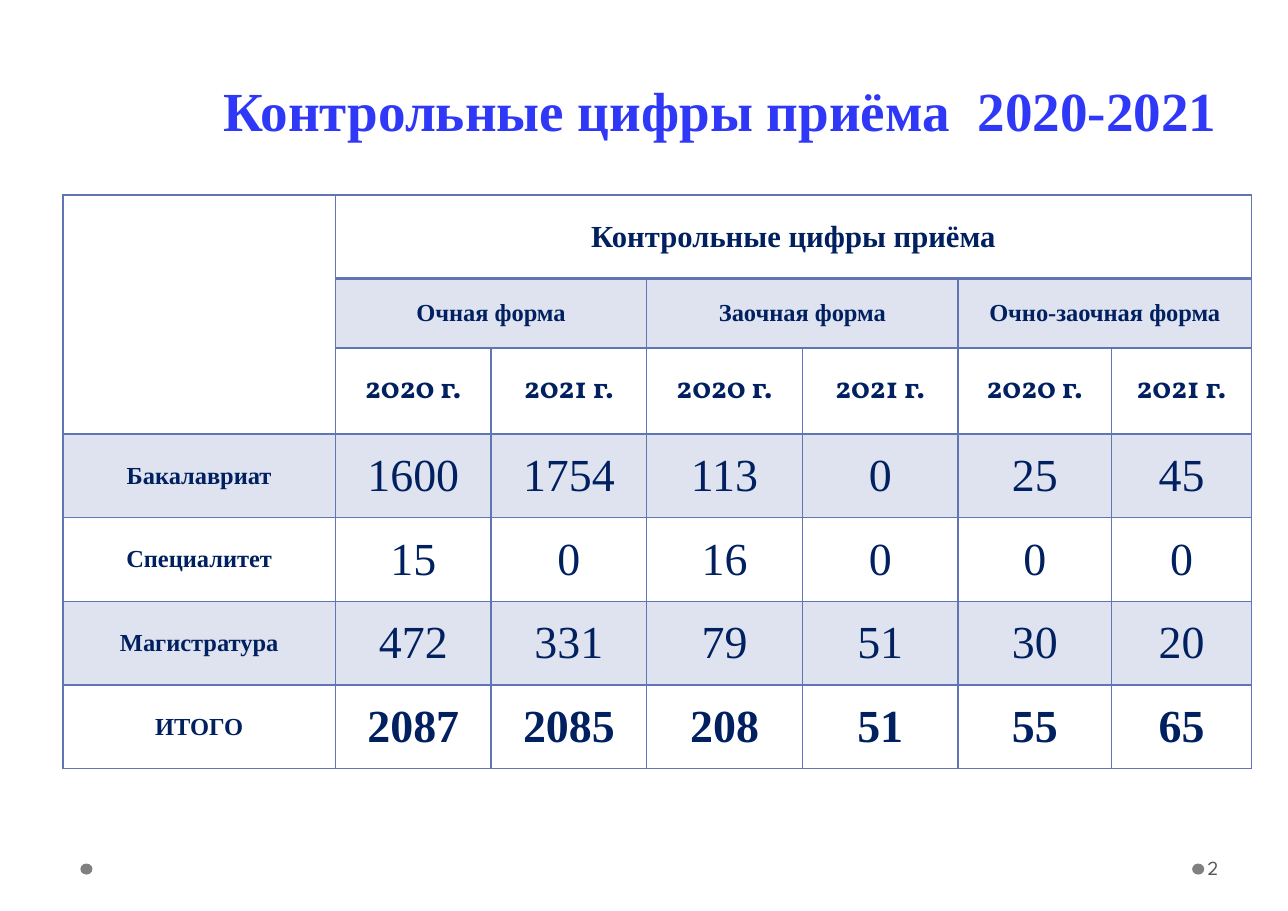
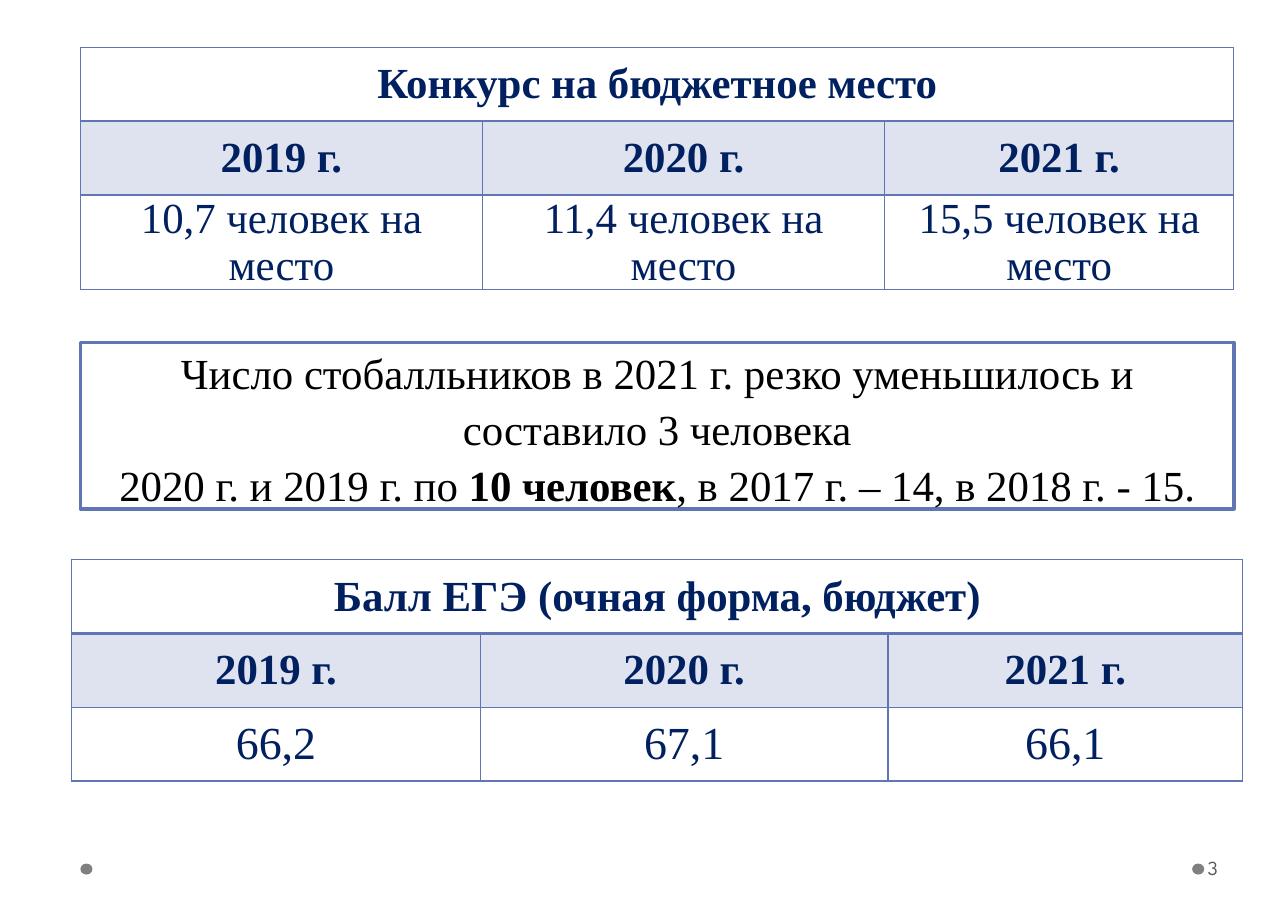
from dataclasses import dataclass

from lxml import etree
from pptx import Presentation
from pptx.dml.color import RGBColor
from pptx.enum.shapes import MSO_SHAPE
from pptx.enum.text import MSO_ANCHOR, MSO_AUTO_SIZE, PP_ALIGN
from pptx.oxml.ns import qn
from pptx.util import Inches, Pt

ELLIPSE, RECTANGLE = MSO_SHAPE.OVAL, MSO_SHAPE.RECTANGLE
CENTER, LEFT = PP_ALIGN.CENTER, PP_ALIGN.LEFT
MIDDLE = MSO_ANCHOR.MIDDLE
NO_AUTOFIT = MSO_AUTO_SIZE.NONE

SLIDE_WIDTH, SLIDE_HEIGHT = Inches(11.69), Inches(8.27)
TITLE_ONLY_LAYOUT, BLANK_LAYOUT = 5, 6

TITLE_BLUE, NAVY, ACCENT = "2E38F6", "002060", "6076B4"
GRAY, DARK_GRAY, BLACK, WHITE = "808080", "595959", "000000", "FFFFFF"
SERIF = "Times New Roman"
BAND_ALPHA = 20
THIN, THICK = 1, 2


@dataclass(frozen=True)
class Box:
    """Place on the slide, in percent of its width and height."""
    left: float
    top: float
    width: float
    height: float

    def lengths(self) -> tuple[int, int, int, int]:
        return (int(SLIDE_WIDTH * self.left / 100), int(SLIDE_HEIGHT * self.top / 100),
                int(SLIDE_WIDTH * self.width / 100), int(SLIDE_HEIGHT * self.height / 100))


@dataclass(frozen=True)
class TextStyle:
    size: float
    bold: bool = False
    color: str = NAVY
    font: str = SERIF


@dataclass(frozen=True)
class Row:
    """Texts by column; None stands for a cell covered by a merged one."""
    weight: float
    texts: tuple[str | None, ...]
    style: TextStyle
    label_style: TextStyle | None = None


@dataclass(frozen=True)
class TableContent:
    box: Box
    column_weights: tuple[float, ...]
    rows: tuple[Row, ...]
    merges: tuple[tuple[int, int, int, int], ...]


TITLE = TextStyle(36, True, TITLE_BLUE)
PAGE_NUMBER = TextStyle(13, False, DARK_GRAY, "League Spartan")
NOTE, NOTE_BOLD = TextStyle(28, False, BLACK), TextStyle(28, True, BLACK)
LABEL, HEADING = TextStyle(16, True), TextStyle(20, True)
YEAR = TextStyle(20, True, font="Vollkorn")
FIGURE, TOTAL = TextStyle(30), TextStyle(30, True)
LARGE, LARGE_BOLD = TextStyle(28), TextStyle(28, True)

TITLE_BOX = Box(16.17, 7.62, 79.47, 8.71)
NOTE_BOX = Box(6.24, 37.61, 89.56, 18.26)
NUMBER_BOX = Box(93.5, 92.62, 6.16, 5.32)
FOOTER_DOTS = tuple(Box(left, 94.8, 0.94, 1.21) for left in (92.56, 6.24))

ADMISSION_TABLE = TableContent(
    Box(4.88, 21.4, 92.3, 63),
    (2.47, 1.41, 1.41, 1.41, 1.41, 1.39, 1.27),
    (
        Row(0.76, (None, "Контрольные цифры приёма", None, None, None, None, None), HEADING),
        Row(0.63, (None, "Очная форма", None, "Заочная форма", None,
                   "Очно-заочная форма", None), LABEL),
        Row(0.78, (None, *("2020 г.", "2021 г.") * 3), YEAR),
        Row(0.76, ("Бакалавриат", "1600", "1754", "113", "0", "25", "45"), FIGURE, LABEL),
        Row(0.76, ("Специалитет", "15", "0", "16", "0", "0", "0"), FIGURE, LABEL),
        Row(0.76, ("Магистратура", "472", "331", "79", "51", "30", "20"), FIGURE, LABEL),
        Row(0.76, ("ИТОГО", "2087", "2085", "208", "51", "55", "65"), TOTAL, LABEL),
    ),
    ((0, 0, 2, 0), (0, 1, 0, 6), (1, 1, 1, 2), (1, 3, 1, 4), (1, 5, 1, 6)),
)


def three_year_table(box: Box, columns: tuple[float, ...], heading: str,
                     values: tuple[str, ...], value_style: TextStyle) -> TableContent:
    return TableContent(box, columns, (
        Row(1, (heading, None, None), LARGE_BOLD),
        Row(1, ("2019 г.", "2020 г.", "2021 г."), LARGE_BOLD),
        Row(1, values, value_style),
    ), ((0, 0, 0, 2),))


COMPETITION_TABLE = three_year_table(
    Box(6.24, 5.2, 89.56, 24.3), (3.65, 3.65, 3.17), "Конкурс на бюджетное место",
    tuple(f"{ratio} человек на место" for ratio in ("10,7", "11,4", "15,5")), LARGE)
SCORE_TABLE = three_year_table(
    Box(5.56, 61.43, 90.93, 24.3), (3.71, 3.7, 3.22), "Балл ЕГЭ (очная форма, бюджет)",
    ("66,2", "67,1", "66,1"), FIGURE)

NOTE_PARAGRAPHS = (
    (("Число стобалльников в 2021 г. резко уменьшилось и составило 3 человека", NOTE),),
    (("2020 г. и 2019 г. по ", NOTE), ("10 человек", NOTE_BOLD),
     (", в 2017 г. – 14, в 2018 г. - 15.", NOTE)),
)


def rgb(color: str) -> RGBColor:
    return RGBColor.from_string(color)


def add_run(paragraph, text: str, style: TextStyle, alignment=CENTER) -> None:
    paragraph.alignment = alignment
    run = paragraph.add_run()
    run.text = text
    run.font.size = Pt(style.size)
    run.font.bold = style.bold
    run.font.name = style.font
    run.font.color.rgb = rgb(style.color)


def set_frame(frame, left: float, right: float, vertical: float = 0.05) -> None:
    frame.word_wrap = True
    frame.auto_size = NO_AUTOFIT
    frame.vertical_anchor = MIDDLE
    frame.margin_left, frame.margin_right = Inches(left), Inches(right)
    frame.margin_top = frame.margin_bottom = Inches(vertical)


def add_plain_shape(slide, kind, box: Box, fill: str):
    shape = slide.shapes.add_shape(kind, *box.lengths())
    shape.shadow.inherit = False
    shape.fill.solid()
    shape.fill.fore_color.rgb = rgb(fill)
    shape.line.fill.background()
    return shape


def add_title(slide, text: str) -> None:
    title = slide.shapes.title
    title.left, title.top, title.width, title.height = TITLE_BOX.lengths()
    set_frame(title.text_frame, 0.11, 0.11)
    add_run(title.text_frame.paragraphs[0], text, TITLE)


def add_footer(slide, number: int) -> None:
    for box in FOOTER_DOTS:
        add_plain_shape(slide, ELLIPSE, box, GRAY)
    frame = slide.shapes.add_textbox(*NUMBER_BOX.lengths()).text_frame
    set_frame(frame, 0.03, 0.05)
    add_run(frame.paragraphs[0], str(number), PAGE_NUMBER, LEFT)


def add_note(slide) -> None:
    shape = add_plain_shape(slide, RECTANGLE, NOTE_BOX, WHITE)
    shape.line.color.rgb = rgb(ACCENT)
    shape.line.width = Pt(2.25)
    frame = shape.text_frame
    set_frame(frame, 0.1, 0.1)
    for index, runs in enumerate(NOTE_PARAGRAPHS):
        paragraph = frame.add_paragraph() if index else frame.paragraphs[0]
        paragraph.line_spacing = 1.09
        for text, style in runs:
            add_run(paragraph, text, style)


def set_borders(cell, top: float, bottom: float) -> None:
    properties = cell._tc.get_or_add_tcPr()
    for side, width in (("L", THIN), ("R", THIN), ("T", top), ("B", bottom)):
        line = etree.SubElement(properties, qn(f"a:ln{side}"), w=str(Pt(width)))
        fill = etree.SubElement(line, qn("a:solidFill"))
        etree.SubElement(fill, qn("a:srgbClr"), val=ACCENT)


def set_cell_fill(cell, banded: bool) -> None:
    if not banded:
        cell.fill.background()
        return
    cell.fill.solid()
    cell.fill.fore_color.rgb = rgb(ACCENT)
    color = cell._tc.tcPr.find(f"{qn('a:solidFill')}/{qn('a:srgbClr')}")
    etree.SubElement(color, qn("a:alpha"), val=str(BAND_ALPHA * 1000))


def add_table(slide, content: TableContent) -> None:
    left, top, width, height = content.box.lengths()
    rows, weights = content.rows, content.column_weights
    table = slide.shapes.add_table(len(rows), len(weights), left, top, width, height).table
    table.first_row = table.horz_banding = False
    for column, weight in zip(table.columns, weights):
        column.width = int(width * weight / sum(weights))
    total_weight = sum(row.weight for row in rows)
    for table_row, row in zip(table.rows, rows):
        table_row.height = int(height * row.weight / total_weight)
    for first_row, first_column, last_row, last_column in content.merges:
        table.cell(first_row, first_column).merge(table.cell(last_row, last_column))
    for row_index, row in enumerate(rows):
        for column_index, text in enumerate(row.texts):
            cell = table.cell(row_index, column_index)
            set_borders(cell, THICK if row_index == 1 else THIN,
                        THICK if row_index == 0 else THIN)
            set_cell_fill(cell, row_index % 2 == 1 and not cell.is_spanned)
            cell.vertical_anchor = MIDDLE
            cell.margin_left = cell.margin_right = Inches(0.07)
            cell.margin_top = cell.margin_bottom = 0
            if text is not None:
                is_label = column_index == 0 and row.label_style
                add_run(cell.text_frame.paragraphs[0], text,
                        row.label_style if is_label else row.style)


def main() -> None:
    presentation = Presentation()
    presentation.slide_width, presentation.slide_height = SLIDE_WIDTH, SLIDE_HEIGHT
    layouts = presentation.slide_layouts

    admission_slide = presentation.slides.add_slide(layouts[TITLE_ONLY_LAYOUT])
    add_title(admission_slide, "Контрольные цифры приёма  2020-2021")
    add_table(admission_slide, ADMISSION_TABLE)

    results_slide = presentation.slides.add_slide(layouts[BLANK_LAYOUT])
    add_table(results_slide, COMPETITION_TABLE)
    add_note(results_slide)
    add_table(results_slide, SCORE_TABLE)

    for number, slide in enumerate(presentation.slides, start=2):
        add_footer(slide, number)
    presentation.save("out.pptx")


if __name__ == "__main__":
    main()
